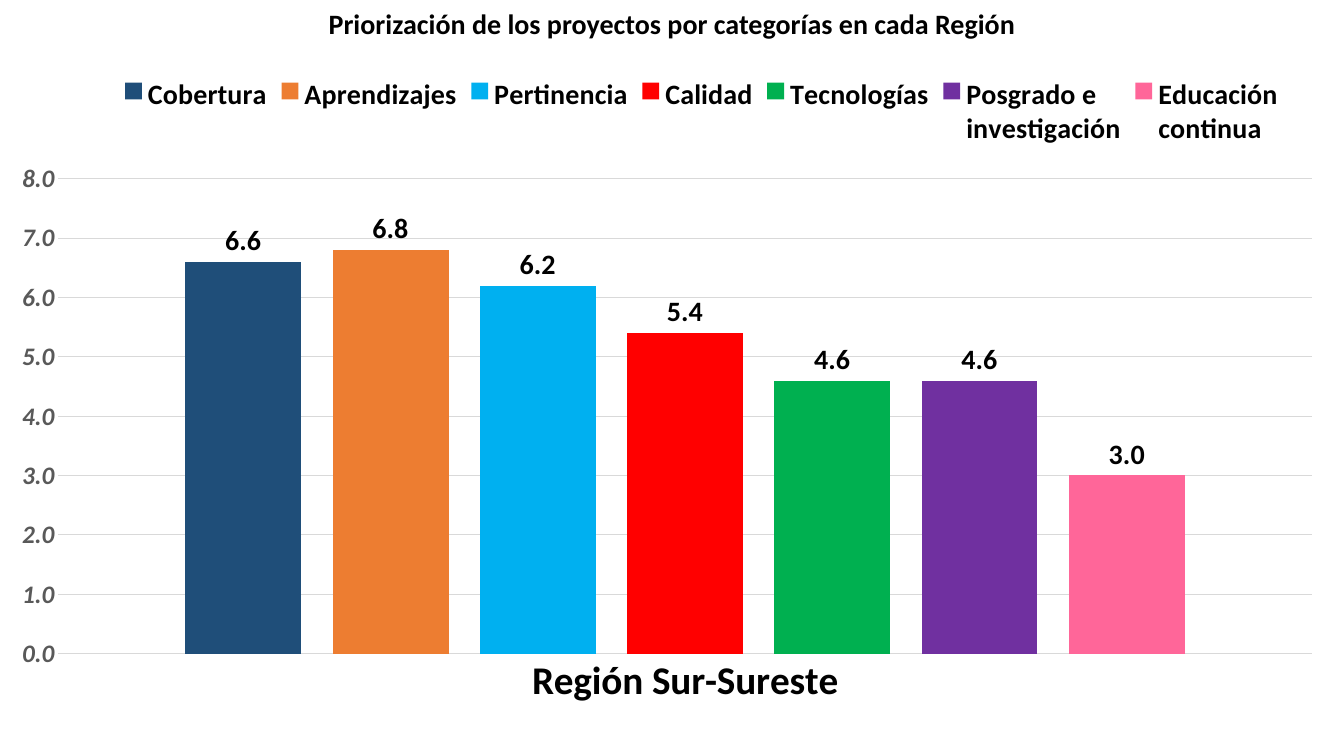
from lxml import etree
from pptx import Presentation
from pptx.chart.data import CategoryChartData
from pptx.dml.color import RGBColor
from pptx.enum.chart import XL_CHART_TYPE, XL_LABEL_POSITION, XL_LEGEND_POSITION, XL_TICK_MARK
from pptx.enum.text import MSO_ANCHOR, PP_ALIGN
from pptx.oxml.ns import qn
from pptx.util import Inches, Pt

COLUMN = XL_CHART_TYPE.COLUMN_CLUSTERED
OUTSIDE = XL_LABEL_POSITION.OUTSIDE_END
BOTTOM = XL_LEGEND_POSITION.BOTTOM
NO_TICK = XL_TICK_MARK.NONE
MIDDLE = MSO_ANCHOR.MIDDLE
CENTER = PP_ALIGN.CENTER

BLACK = RGBColor(0x00, 0x00, 0x00)
GRAY = RGBColor(0x59, 0x59, 0x59)
PALE = RGBColor(0xD9, 0xD9, 0xD9)
NAVY = RGBColor(0x1F, 0x4E, 0x79)
ORANGE = RGBColor(0xED, 0x7D, 0x31)
SKY = RGBColor(0x00, 0xB0, 0xF0)
RED = RGBColor(0xFF, 0x00, 0x00)
GREEN = RGBColor(0x00, 0xB0, 0x50)
PURPLE = RGBColor(0x70, 0x30, 0xA0)
PINK = RGBColor(0xFF, 0x66, 0x99)

TITLE = "Priorización de los proyectos por categorías en cada Región"
REGION = "Región Sur-Sureste"
SCORES = [
    ("Cobertura", 6.6, NAVY),
    ("Aprendizajes", 6.8, ORANGE),
    ("Pertinencia", 6.2, SKY),
    ("Calidad", 5.4, RED),
    ("Tecnologías", 4.6, GREEN),
    ("Posgrado e \ninvestigación", 4.6, PURPLE),
    ("Educación \ncontinua", 3.0, PINK),
]
PLOT_BOX = (0.03, 0.17, 0.96, 0.7)
LEGEND_BOX = (0.07, 0.02, 0.91, 0.1)


def style(font, size, color=BLACK):
    font.name = "Calibri"
    font.size = Pt(size)
    font.bold = True
    font.color.rgb = color


def place(parent, index, box, inner=False):
    for old in parent.findall(qn("c:layout")):
        parent.remove(old)
    layout = etree.Element(qn("c:layout"))
    manual = etree.SubElement(layout, qn("c:manualLayout"))
    items = [("layoutTarget", "inner")] if inner else []
    items += [("xMode", "edge"), ("yMode", "edge")]
    items += zip("xywh", box)
    for tag, val in items:
        etree.SubElement(manual, qn("c:" + tag)).set("val", str(val))
    parent.insert(index, layout)


def add_title(slide):
    box = slide.shapes.add_textbox(0, Inches(0.01), Inches(13.33), Inches(0.44))
    frame = box.text_frame
    frame.word_wrap = True
    frame.vertical_anchor = MIDDLE
    frame.text = TITLE
    line = frame.paragraphs[0]
    line.alignment = CENTER
    style(line.runs[0].font, 20)


def add_scores(slide):
    data = CategoryChartData(number_format="0.0")
    data.categories = [REGION]
    for name, score, color in SCORES:
        data.add_series(name, [score])
    chart = slide.shapes.add_chart(
        COLUMN, Inches(0.19), Inches(0.63), Inches(12.95), Inches(6.73), data
    ).chart
    chart.has_title = False
    chart.font.name = "Calibri"
    chart.font.size = Pt(10)
    chart.font.color.rgb = BLACK

    plot = chart.plots[0]
    plot.gap_width = 219
    plot.overlap = -27
    plot.vary_by_categories = False
    for bar, (name, score, color) in zip(plot.series, SCORES):
        bar.format.fill.solid()
        bar.format.fill.fore_color.rgb = color
        bar.invert_if_negative = False
        labels = bar.data_labels
        labels.show_value = True
        labels.position = OUTSIDE
        labels.number_format = "0.0"
        labels.number_format_is_linked = False
        style(labels.font, 20)

    base, scale = chart.category_axis, chart.value_axis
    for axis in (base, scale):
        axis.major_tick_mark = NO_TICK
        axis.minor_tick_mark = NO_TICK
    style(base.tick_labels.font, 28)
    style(scale.tick_labels.font, 18, GRAY)
    scale.tick_labels.font.italic = True
    scale.tick_labels.number_format = "0.0"
    scale.tick_labels.number_format_is_linked = False
    scale.minimum_scale = 0
    scale.maximum_scale = 8
    scale.major_unit = 1
    scale.format.line.fill.background()
    scale.has_major_gridlines = True
    for line in (base.format.line, scale.major_gridlines.format.line):
        line.color.rgb = PALE
        line.width = Pt(0.75)

    chart.has_legend = True
    legend = chart.legend
    legend.position = BOTTOM
    legend.include_in_layout = False
    style(legend.font, 20)
    place(legend._element, 1, LEGEND_BOX)
    place(chart._chartSpace.find(".//" + qn("c:plotArea")), 0, PLOT_BOX, True)


def main():
    deck = Presentation()
    deck.slide_width = Inches(13.33)
    deck.slide_height = Inches(7.5)
    slide = deck.slides.add_slide(deck.slide_layouts[6])
    add_scores(slide)
    add_title(slide)
    deck.save("out.pptx")


if __name__ == "__main__":
    main()
